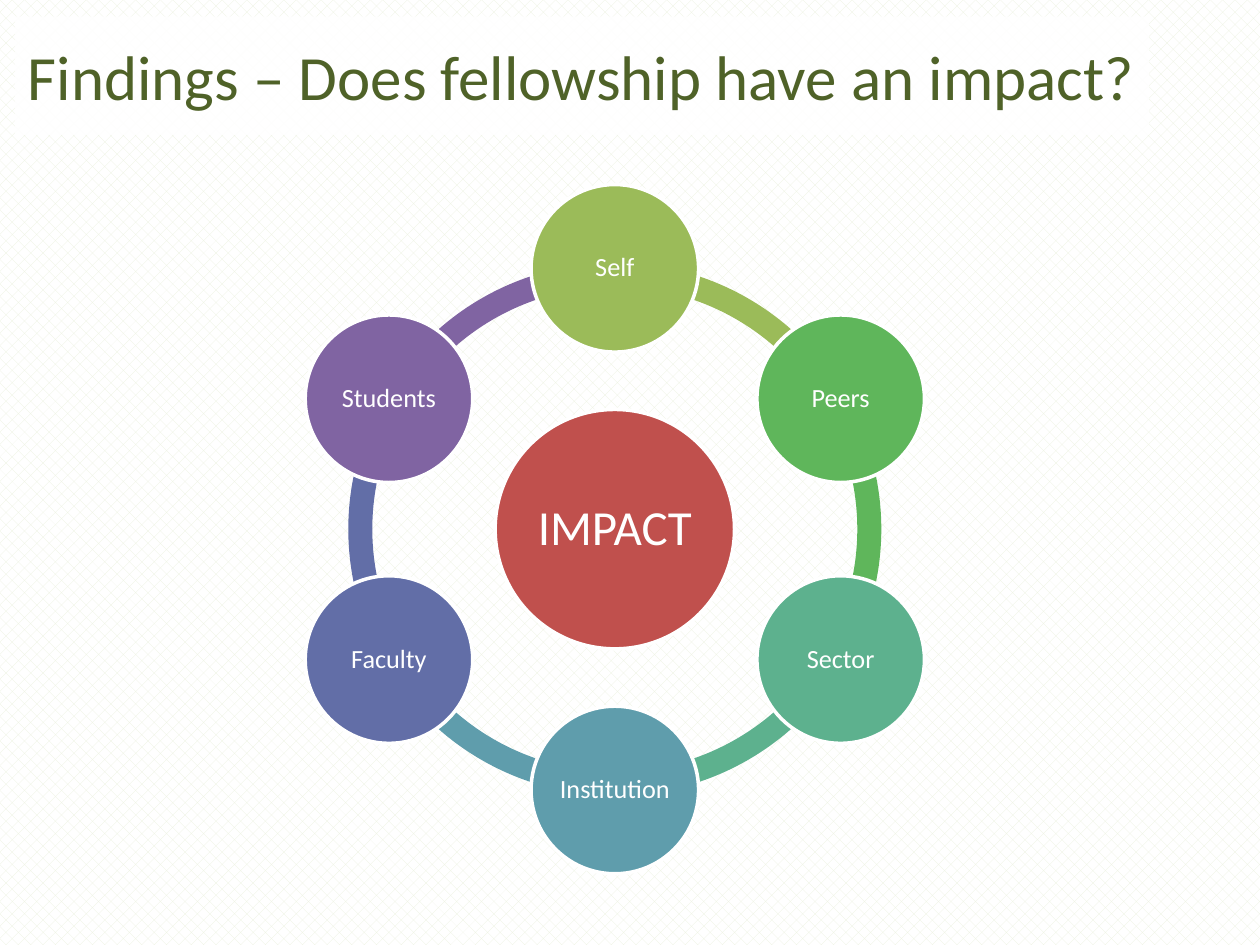
"""Build a slide showing six areas of fellowship impact on a ring."""
import math

from lxml import etree
from pptx import Presentation
from pptx import util as u
from pptx.dml.color import RGBColor
from pptx.enum import dml, shapes, text
from pptx.oxml.ns import qn


def color(value):
    return RGBColor.from_string(value)


def add_circle(group, center_x, center_y, size, fill, label, font_size, inset):
    circle = group.shapes.add_shape(
        shapes.MSO_SHAPE.OVAL, u.Inches(center_x - size / 2),
        u.Inches(center_y - size / 2), u.Inches(size), u.Inches(size))
    circle.shadow.inherit = False
    circle.fill.solid()
    circle.fill.fore_color.rgb = color(fill)
    circle.line.color.rgb = color("FFFFFF")
    circle.line.width = u.Pt(2)
    frame = circle.text_frame
    frame.word_wrap = True
    frame.vertical_anchor = text.MSO_ANCHOR.MIDDLE
    frame.margin_left = frame.margin_right = u.Inches(inset)
    frame.margin_top = frame.margin_bottom = u.Inches(inset)
    para = frame.paragraphs[0]
    para.text = label
    para.alignment = text.PP_ALIGN.CENTER
    para.line_spacing = 0.9
    para.font.name = "Calibri"
    para.font.size = u.Pt(font_size)
    para.font.color.rgb = color("FFFFFF")


deck = Presentation()
deck.slide_width, deck.slide_height = u.Inches(10), u.Inches(7.5)
page = deck.slides.add_slide(deck.slide_layouts[5])
backdrop = page.background.fill
backdrop.patterned()
backdrop.pattern = dml.MSO_PATTERN.PERCENT_30
backdrop.fore_color.rgb = color("EBF1DE")
backdrop.back_color.rgb = color("FFFFFF")

title = page.shapes.title
title.left, title.top = u.Inches(0.12), u.Inches(0.13)
title.width, title.height = u.Inches(9), u.Inches(0.94)
title.fill.solid()
title.fill.fore_color.rgb = color("FFFFFF")
title_color = title.fill._xPr.find(qn("a:solidFill")).find(qn("a:srgbClr"))
etree.SubElement(title_color, qn("a:alpha")).set("val", "90000")
title.text_frame.vertical_anchor = text.MSO_ANCHOR.MIDDLE
para = title.text_frame.paragraphs[0]
para.text = "Findings – Does fellowship have an impact?"
para.alignment = text.PP_ALIGN.LEFT
para.font.name = "Calibri"
para.font.size = u.Pt(36)
para.font.color.rgb = color("4F6228")

areas = [
    ("Self", "9BBB59"), ("Peers", "5FB65B"), ("Sector", "5DB18E"),
    ("Institution", "5F9DAC"), ("Faculty", "626EA7"), ("Students", "8064A2"),
]
center_x, center_y, radius, ring_size = 4.88, 4.2, 2.07, 4.23
step = 360 / len(areas)
angles = [(270 + step * index) % 360 for index in range(len(areas))]
angle_unit = 0.6
ring = page.shapes.add_group_shape()

for angle, (label, fill) in reversed(list(zip(angles, areas))):
    arc = ring.shapes.add_shape(
        shapes.MSO_SHAPE.BLOCK_ARC, u.Inches(center_x - ring_size / 2),
        u.Inches(center_y - ring_size / 2), u.Inches(ring_size), u.Inches(ring_size))
    arc.shadow.inherit = False
    arc.adjustments[0] = angle * angle_unit
    arc.adjustments[1] = (angle + step) % 360 * angle_unit
    arc.adjustments[2] = 0.045
    arc.fill.solid()
    arc.fill.fore_color.rgb = color(fill)
    arc.line.fill.background()

add_circle(ring, center_x, center_y, 1.9, "C0504D", "IMPACT", 28, 0.04)
for angle, (label, fill) in zip(angles, areas):
    x = center_x + radius * math.cos(math.radians(angle))
    y = center_y + radius * math.sin(math.radians(angle))
    add_circle(ring, x, y, 1.33, fill, label, 15, 0.02)

deck.save("out.pptx")
